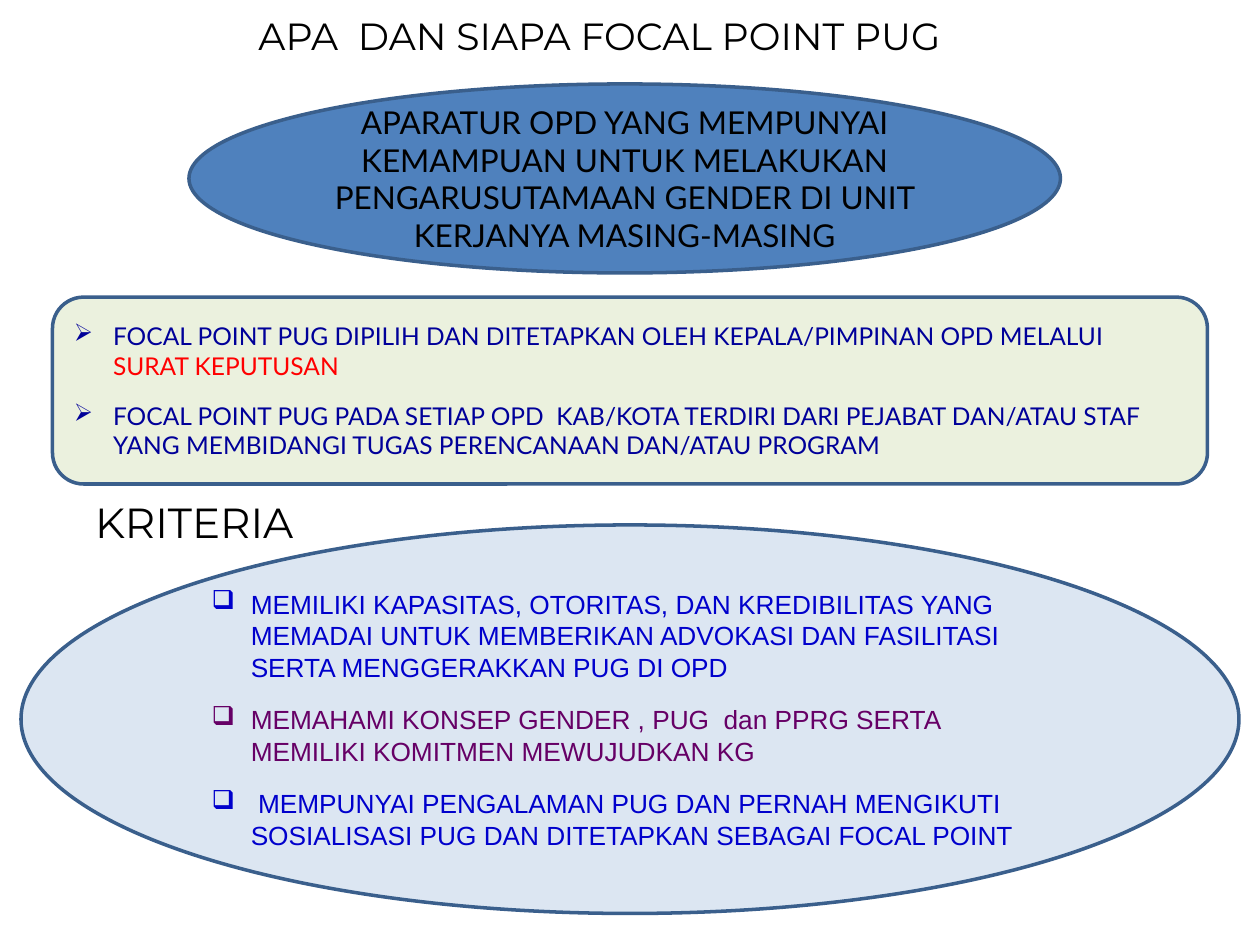
from lxml.etree import SubElement
from pptx import Presentation
from pptx.dml.color import RGBColor
from pptx.enum.shapes import MSO_SHAPE
from pptx.enum.text import MSO_ANCHOR, MSO_AUTO_SIZE, PP_ALIGN
from pptx.oxml.ns import qn
from pptx.util import Inches, Pt

COLORS = {
    "black": "000000", "edge": "3A5F8C", "steel": "4F81BD",
    "pale": "DCE6F2", "cream": "EBF1DE", "blue": "0000CC",
    "navy": "000099", "plum": "660066", "red": "FF0000",
}
UNIT = Inches(10) / 120  # the slide is a grid of 120 columns by 90 rows

RULES = [
    [("FOCAL POINT PUG DIPILIH DAN DITETAPKAN OLEH KEPALA/PIMPINAN OPD MELALUI", "navy"),
     (" SURAT KEPUTUSAN", "red")],
    [("FOCAL POINT PUG PADA SETIAP OPD  KAB/KOTA TERDIRI DARI PEJABAT DAN/ATAU STAF "
      "YANG MEMBIDANGI TUGAS PERENCANAAN DAN/ATAU PROGRAM", "navy")],
]
CRITERIA = [
    [("MEMILIKI KAPASITAS, OTORITAS, DAN KREDIBILITAS YANG MEMADAI UNTUK MEMBERIKAN "
      "ADVOKASI DAN FASILITASI SERTA MENGGERAKKAN PUG DI OPD", "blue")],
    [("MEMAHAMI KONSEP GENDER , PUG  dan PPRG SERTA MEMILIKI KOMITMEN MEWUJUDKAN KG", "plum")],
    [(" MEMPUNYAI PENGALAMAN PUG DAN PERNAH MENGIKUTI SOSIALISASI PUG DAN DITETAPKAN "
      "SEBAGAI FOCAL POINT", "blue")],
]


def color(name):
    return RGBColor.from_string(COLORS[name])


def grid(*cells):
    return [round(cell * UNIT) for cell in cells]


def set_font(font, name, size):
    font.name, font.size = name, Pt(size)


def add_panel(slide, kind, box, fill):
    panel = slide.shapes.add_shape(kind, *grid(*box))
    panel.shadow.inherit = False
    panel.fill.solid()
    panel.fill.fore_color.rgb = color(fill)
    panel.line.color.rgb = color("edge")
    panel.line.width = Pt(2)
    return panel


def put_label(shape, text, name, size):
    frame = shape.text_frame
    frame.text = text
    frame.word_wrap = True
    frame.auto_size = MSO_AUTO_SIZE.NONE
    frame.vertical_anchor = MSO_ANCHOR.MIDDLE
    line = frame.paragraphs[0]
    line.alignment = PP_ALIGN.CENTER
    set_font(line.font, name, size)
    line.font.color.rgb = color("black")


def put_list(shape, items, mark, name, size):
    frame = shape.text_frame
    frame.word_wrap = True
    frame.vertical_anchor = MSO_ANCHOR.MIDDLE
    frame.margin_right = Inches(0.15)
    for index, item in enumerate(items):
        line = frame.add_paragraph() if index else frame.paragraphs[0]
        line.alignment = PP_ALIGN.LEFT
        line.space_before = line.space_after = Pt(6)
        set_font(line.font, name, size)
        # Hanging bullet
        props = line._p.get_or_add_pPr()
        props.set("marL", str(Inches(0.31)))
        props.set("indent", str(-Inches(0.31)))
        bullet = SubElement(props, qn("a:buChar"), char=mark)
        props.find(qn("a:defRPr")).addprevious(bullet)
        for text, tint in item:
            run = line.add_run()
            run.text = text
            run.font.color.rgb = color(tint)


def main():
    deck = Presentation()
    deck.slide_width, deck.slide_height = grid(120, 90)
    slide = deck.slides.add_slide(deck.slide_layouts[5])

    # Title
    title = slide.shapes.title
    title.left, title.top, title.width, title.height = grid(14.6, 1, 85, 4.8)
    put_label(title, "APA  DAN SIAPA FOCAL POINT PUG", "Montserrat", 21.6)

    # Definition
    oval = add_panel(slide, MSO_SHAPE.OVAL, (18, 8, 83, 18), "steel")
    put_label(oval, "APARATUR OPD YANG MEMPUNYAI KEMAMPUAN UNTUK MELAKUKAN "
              "PENGARUSUTAMAAN GENDER DI UNIT KERJANYA MASING-MASING", "Lato", 18)

    # Criteria
    head = slide.shapes.add_textbox(*grid(3, 46, 31, 7.4))
    put_label(head, "KRITERIA", "Montserrat", 24)
    oval = add_panel(slide, MSO_SHAPE.OVAL, (2, 50, 116, 37), "pale")
    put_list(oval, CRITERIA, "❑", "Arial", 15)

    # Appointment rules
    card = add_panel(slide, MSO_SHAPE.ROUNDED_RECTANGLE, (5, 28.3, 110, 17.8), "cream")
    put_list(card, RULES, "➢", "Lato", 14)

    deck.save("out.pptx")


if __name__ == "__main__":
    main()
